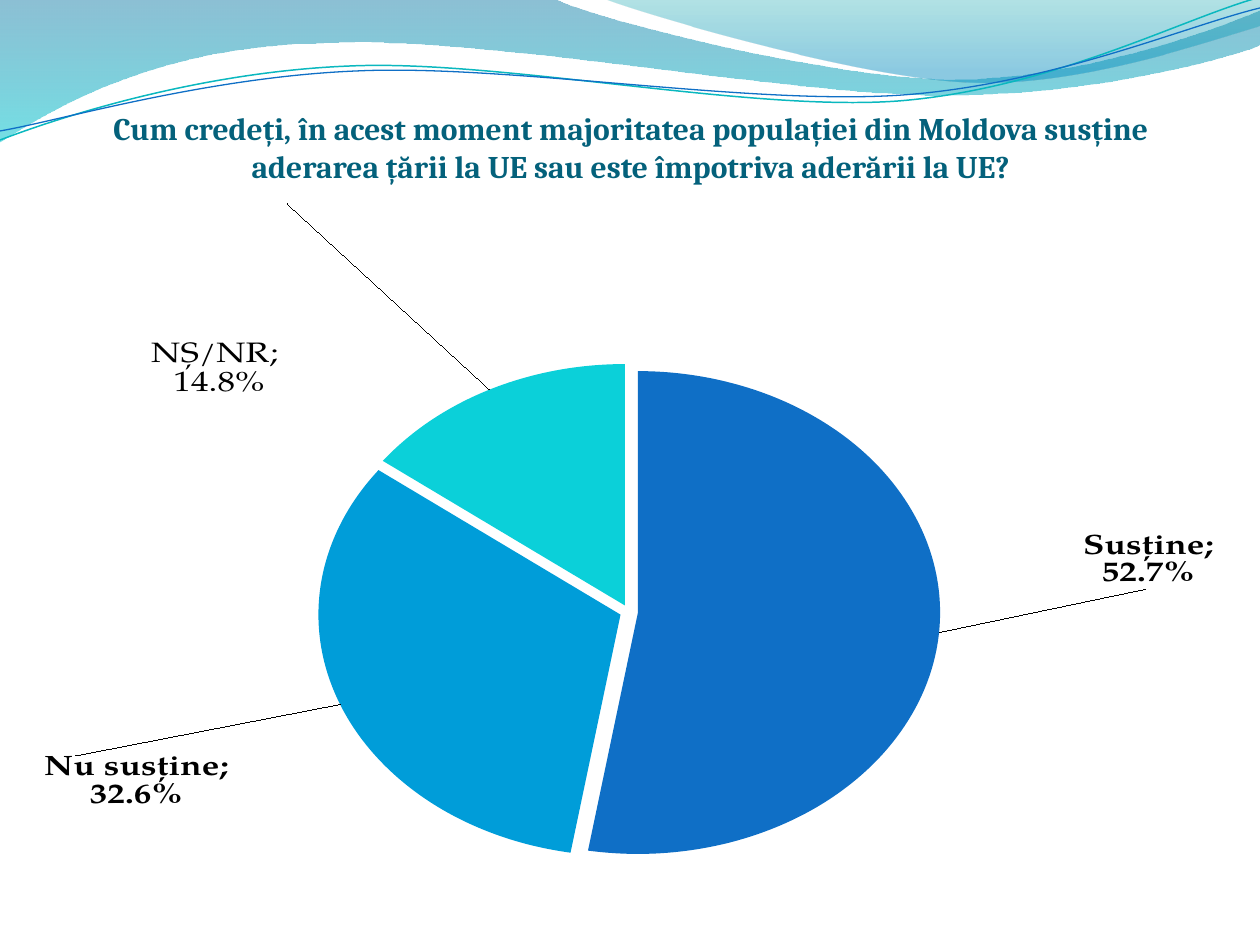
"""Build the survey slide: wave header, question and pie chart of answers."""
from dataclasses import dataclass

from lxml import etree
from pptx import Presentation
from pptx import util as u
from pptx.chart import data
from pptx.dml import color
from pptx.enum import chart as ch
from pptx.enum import shapes, text
from pptx.oxml import ns

EMU_PER_PX = 914400 / 126
LABEL_FONT = "TeX Gyre Pagella"

Point = tuple[int, int]
Segment = list[Point]


@dataclass
class Band:
    """Closed outline of lines (one point) and Bezier curves (three points)."""
    start: Point
    segments: list[Segment]
    stops: list[tuple[float, str, int]]


@dataclass
class Strand:
    """Thin open wave."""
    start: Point
    segments: list[Segment]
    tint: str
    weight: float


@dataclass
class Answer:
    """One slice with the offset of its label."""
    name: str
    share: float
    fill: str
    bold: bool
    offset: tuple[float, float]
    wording: str = ""


BANDS = [
    Band((0, 0),
         [[(554, -1)],
          [(600, 21), (837, 79), (955, 79)], [(1075, 79), (1207, 33), (1260, 11)],
          [(1261, 45)],
          [(1239, 55), (1096, 96), (940, 95)], [(784, 95), (481, 35), (324, 43)],
          [(163, 45), (58, 105), (-1, 142)],
          [(0, 0)]],
         [(0, "0074A1", 45), (1, "00C6CF", 55)]),
    Band((604, -1),
         [[(641, 14), (859, 78), (969, 82)], [(1079, 87), (1211, 40), (1260, 26)],
          [(1260, 0)], [(604, -1)]],
         [(0, "00A1A9", 30), (0.8, "008BBF", 45)]),
]
STRANDS = [
    Strand((0, 140),
           [[(60, 117), (199, 72), (349, 66)], [(498, 59), (747, 112), (898, 101)],
            [(1050, 89), (1182, 19), (1257, -2)]], "0AB8BF", 0.85),
    Strand((0, 131),
           [[(59, 121), (207, 77), (357, 71)], [(508, 64), (752, 106), (903, 95)],
            [(1053, 84), (1186, 26), (1260, 8)]], "0F6FC6", 0.75),
]
ANSWERS = [
    Answer("Susține", 0.527, "0F6FC6", True, (0.17, -0.13)),
    Answer("Nu susține", 0.326, "009DD9", True, (-0.22, 0.09)),
    Answer("NȘ/NR", 0.148, "0BD0D9", False, (-0.17, -0.33), "NȘ/NR; \n14.8%"),
]


def px(length: float) -> u.Emu:
    """Turn pixels into EMU."""
    return u.Emu(round(length * EMU_PER_PX))


def rgb(value: str) -> color.RGBColor:
    """Turn a hex string into a colour."""
    return color.RGBColor.from_string(value)


def add_outline(slide, start: Point, segments: list[Segment], closed: bool):
    """Draw a freeform, turning each three-point segment into a Bezier curve."""
    builder = slide.shapes.build_freeform(*start, scale=EMU_PER_PX)
    builder.add_line_segments([point for segment in segments for point in segment],
                              close=closed)
    outline = builder.convert_to_shape()
    outline.shadow.inherit = False
    lines = iter(list(outline.element.spPr.iter(ns.qn("a:lnTo"))))
    for segment in segments:
        steps = [next(lines) for _ in segment]
        if len(steps) == 3:
            curve = etree.Element(ns.qn("a:cubicBezTo"))
            steps[0].addprevious(curve)
            for step in steps:
                curve.append(step[0])
                step.getparent().remove(step)
    return outline


def add_band(slide, band: Band) -> None:
    """Draw a translucent band with a vertical gradient."""
    outline = add_outline(slide, band.start, band.segments, True)
    outline.line.fill.background()
    outline.fill.gradient()
    outline.fill.gradient_angle = 270
    for stop, (position, tint, _) in zip(outline.fill.gradient_stops, band.stops):
        stop.position = position
        stop.color.rgb = rgb(tint)
    tones = outline.element.spPr.iter(ns.qn("a:srgbClr"))
    for tone, (_, _, opacity) in zip(tones, band.stops):
        etree.SubElement(tone, ns.qn("a:alpha"), val=str(opacity * 1000))


def add_strand(slide, strand: Strand) -> None:
    """Draw a thin wave line."""
    outline = add_outline(slide, strand.start, strand.segments, False)
    outline.fill.background()
    outline.line.color.rgb = rgb(strand.tint)
    outline.line.width = u.Pt(strand.weight)


def add_question(slide) -> None:
    """Write the survey question."""
    question = slide.shapes.add_textbox(px(64), px(85), px(1134), px(100)).text_frame
    question.word_wrap = True
    question.vertical_anchor = text.MSO_ANCHOR.BOTTOM
    question.margin_left = question.margin_right = question.margin_bottom = 0
    question.text = ("Cum credeți, în acest moment majoritatea populației din Moldova "
                     "susține aderarea țării la UE sau este împotriva aderării la UE?")
    paragraph = question.paragraphs[0]
    paragraph.alignment = text.PP_ALIGN.CENTER
    font = paragraph.runs[0].font
    font.name, font.size, font.bold = "Cambria", u.Pt(18), True
    font.color.rgb = rgb("04617B")


def layout_xml(**values):
    """Build a manual chart layout from the given values."""
    layout = etree.Element(ns.qn("c:layout"))
    manual = etree.SubElement(layout, ns.qn("c:manualLayout"))
    for tag, value in values.items():
        etree.SubElement(manual, ns.qn(f"c:{tag}"), val=str(value))
    return layout


def style_label_font(font, bold: bool) -> None:
    """Apply the chart's lettering."""
    font.name, font.size, font.bold = LABEL_FONT, u.Pt(20), bold
    font.color.rgb = rgb("000000")


def style_slice(point, answer: Answer) -> None:
    """Colour a slice and letter its label."""
    point.format.fill.solid()
    point.format.fill.fore_color.rgb = rgb(answer.fill)
    label = point.data_label
    if answer.wording:
        label.text_frame.text = answer.wording
        for paragraph in label.text_frame.paragraphs:
            for run in paragraph.runs:
                style_label_font(run.font, answer.bold)
    else:
        style_label_font(label.font, answer.bold)
    label.position = ch.XL_LABEL_POSITION.OUTSIDE_END


def add_pie(slide) -> None:
    """Draw the pie chart of answers."""
    shares = data.CategoryChartData(number_format="0.0%")
    shares.categories = [answer.name for answer in ANSWERS]
    shares.add_series("Series 1", [answer.share for answer in ANSWERS])
    pie = slide.shapes.add_chart(ch.XL_CHART_TYPE.PIE, px(44), px(204), px(1170), px(684),
                                 shares).chart
    pie.has_legend = pie.has_title = False
    style_label_font(pie.font, True)
    plot = pie.plots[0]
    plot.vary_by_categories = True
    series = plot.series[0]
    labels = series.data_labels
    style_label_font(labels.font, True)
    labels.show_category_name = labels.show_value = True
    labels.number_format, labels.number_format_is_linked = "0.0%", False
    for leader_flag in series._element.iter(ns.qn("c:showLeaderLines")):
        leader_flag.set("val", "1")
    for index, answer in enumerate(ANSWERS):
        style_slice(series.points[index], answer)
    for label, answer in zip(series._element.iter(ns.qn("c:dLbl")), ANSWERS):
        x, y = answer.offset
        label.find(ns.qn("c:idx")).addnext(layout_xml(x=x, y=y))
        label.find(ns.qn("c:showCatName")).set("val", "1")
        etree.SubElement(label, ns.qn("c:separator")).text = "; "
    explosion = etree.Element(ns.qn("c:explosion"), val="3")
    series._element.find(ns.qn("c:dPt")).addprevious(explosion)
    area = plot._element.getparent()
    for default in area.findall(ns.qn("c:layout")):
        area.remove(default)
    area.insert(0, layout_xml(layoutTarget="inner", xMode="edge", yMode="edge",
                              x=0.02, y=0.04, w=0.96, h=0.91))


def main() -> None:
    """Build and save the slide."""
    deck = Presentation()
    deck.slide_width, deck.slide_height = px(1260), px(945)
    slide = deck.slides.add_slide(deck.slide_layouts[6])
    for band in BANDS:
        add_band(slide, band)
    for strand in STRANDS:
        add_strand(slide, strand)
    add_question(slide)
    add_pie(slide)
    deck.save("out.pptx")


if __name__ == "__main__":
    main()
